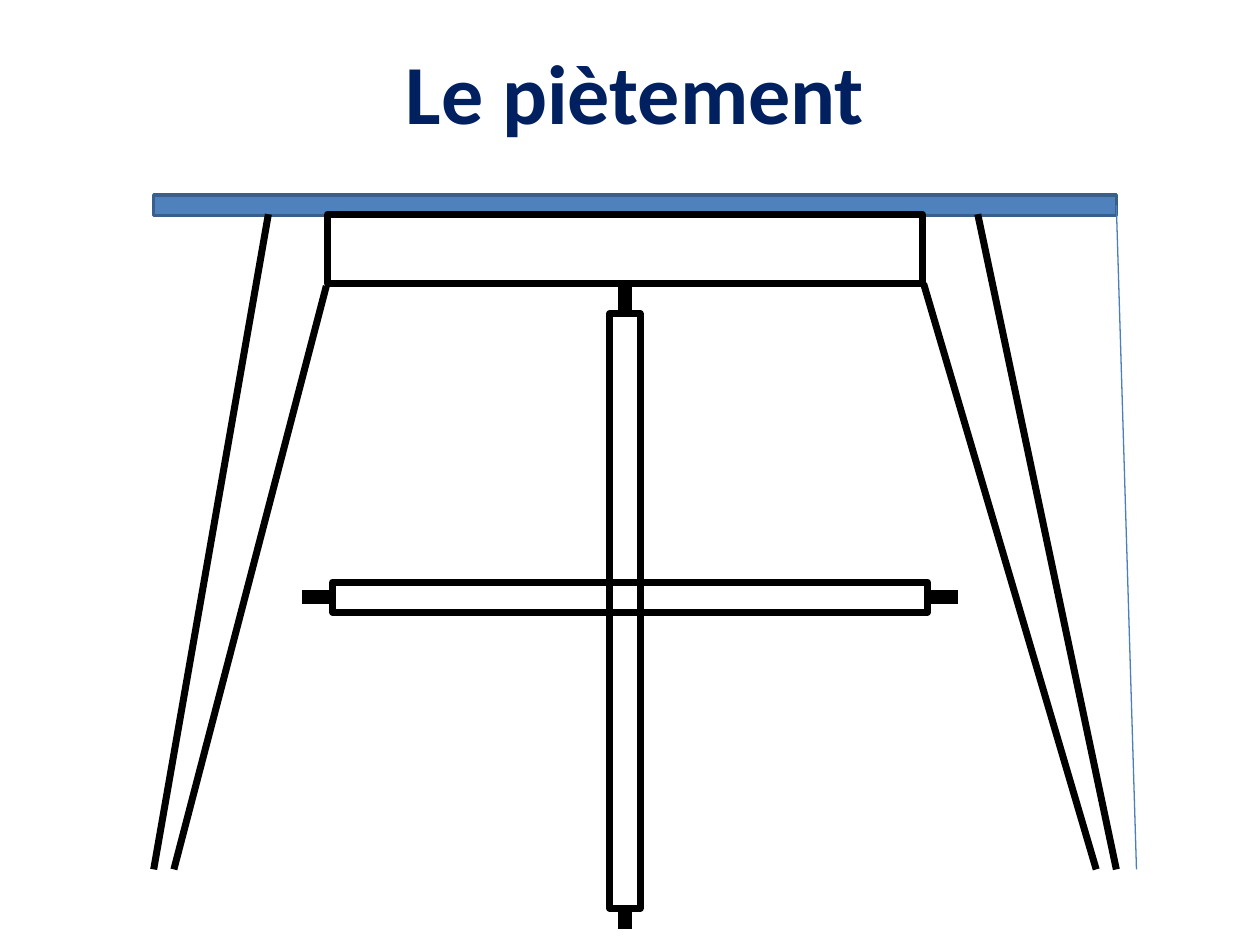
from dataclasses import dataclass
from typing import Optional

from lxml import etree
from pptx import Presentation
from pptx.dml.color import RGBColor
from pptx.enum import shapes, text
from pptx.oxml import ns
from pptx import util as u

COLUMNS, ROWS = 100, 75
BLACK, NAVY, BLUE, EDGE, THIN = "000000", "002060", "4F81BD", "3A5F8C", "4B7EBC"
TOP, LEFT, BOTTOM, RIGHT = range(4)

deck = Presentation()
deck.slide_width, deck.slide_height = u.Inches(10), u.Inches(7.5)
slide = deck.slides.add_slide(deck.slide_layouts[6])


@dataclass
class Board:
    name: str
    column: float
    row: float
    columns: float
    rows: float
    fill: Optional[str] = None
    line: str = BLACK
    weight: float = 4


@dataclass
class Rod:
    start: tuple
    end: tuple
    color: str = BLACK
    weight: float = 4
    start_joint: Optional[tuple] = None
    end_joint: Optional[tuple] = None


def color(value: str) -> RGBColor:
    return RGBColor.from_string(value)


def x(columns: float) -> int:
    return round(deck.slide_width * columns / COLUMNS)


def y(rows: float) -> int:
    return round(deck.slide_height * rows / ROWS)


def apply(target, values: dict) -> None:
    for key, value in values.items():
        setattr(target, key, value)


def stroke(line, value: str, weight: float) -> None:
    line.color.rgb = color(value)
    line.width = u.Pt(weight)


def draw_board(board: Board):
    panel = slide.shapes.add_shape(
        shapes.MSO_SHAPE.RECTANGLE,
        x(board.column), y(board.row), x(board.columns), y(board.rows),
    )
    panel.shadow.inherit = False
    if board.fill:
        panel.fill.solid()
        panel.fill.fore_color.rgb = color(board.fill)
    else:
        panel.fill.background()
    stroke(panel.line, board.line, board.weight)
    return panel


def draw_rod(rod: Rod, boards: dict) -> None:
    bar = slide.shapes.add_connector(
        shapes.MSO_CONNECTOR.STRAIGHT,
        x(rod.start[0]), y(rod.start[1]), x(rod.end[0]), y(rod.end[1]),
    )
    stroke(bar.line, rod.color, rod.weight)
    etree.SubElement(bar._element.spPr, ns.qn("a:effectLst"))
    if rod.start_joint:
        name, side = rod.start_joint
        bar.begin_connect(boards[name], side)
    if rod.end_joint:
        name, side = rod.end_joint
        bar.end_connect(boards[name], side)


def draw_title(words: str) -> None:
    frame = slide.shapes.add_textbox(x(5.4), y(2.1), x(90), y(10.3)).text_frame
    apply(frame, {"word_wrap": True, "vertical_anchor": text.MSO_ANCHOR.MIDDLE})
    heading = frame.paragraphs[0]
    heading.alignment = text.PP_ALIGN.CENTER
    run = heading.add_run()
    run.text = words
    apply(run.font, {"name": "Calibri", "size": u.Pt(48), "bold": True})
    run.font.color.rgb = color(NAVY)


BOARDS = [
    Board("column", 48.4, 24.9, 2.4, 47.2),
    Board("tabletop", 12.2, 15.5, 76.4, 1.6, BLUE, EDGE, 2),
    Board("apron", 26, 17, 47.2, 5.5),
    Board("crossbar", 26.4, 46.2, 47.2, 2.4),
]

LEGS = [
    Rod((77.6, 17), (88.6, 69)),
    Rod((73.3, 22.5), (87, 69)),
    Rod((21.3, 17), (12.2, 69)),
    Rod((25.9, 22.7), (13.8, 69)),
]

TENONS = [
    Rod((73.6, 47.4), (76, 47.4), weight=8, start_joint=("crossbar", RIGHT)),
    Rod((24, 47.4), (26.4, 47.4), weight=8, end_joint=("crossbar", LEFT)),
    Rod((49.6, 22.5), (49.6, 24.9), weight=8,
        start_joint=("apron", BOTTOM), end_joint=("column", TOP)),
    Rod((49.6, 73.7), (49.6, 72.1), weight=8, end_joint=("column", BOTTOM)),
]

GUIDE = Rod((88.6, 16.3), (90.2, 69), THIN, 0.75, ("tabletop", RIGHT))

draw_title("Le piètement")
panels = {}
for board in BOARDS[:3]:
    panels[board.name] = draw_board(board)
for leg in LEGS:
    draw_rod(leg, panels)
for board in BOARDS[3:]:
    panels[board.name] = draw_board(board)
for rod in [*TENONS, GUIDE]:
    draw_rod(rod, panels)

deck.save("out.pptx")
